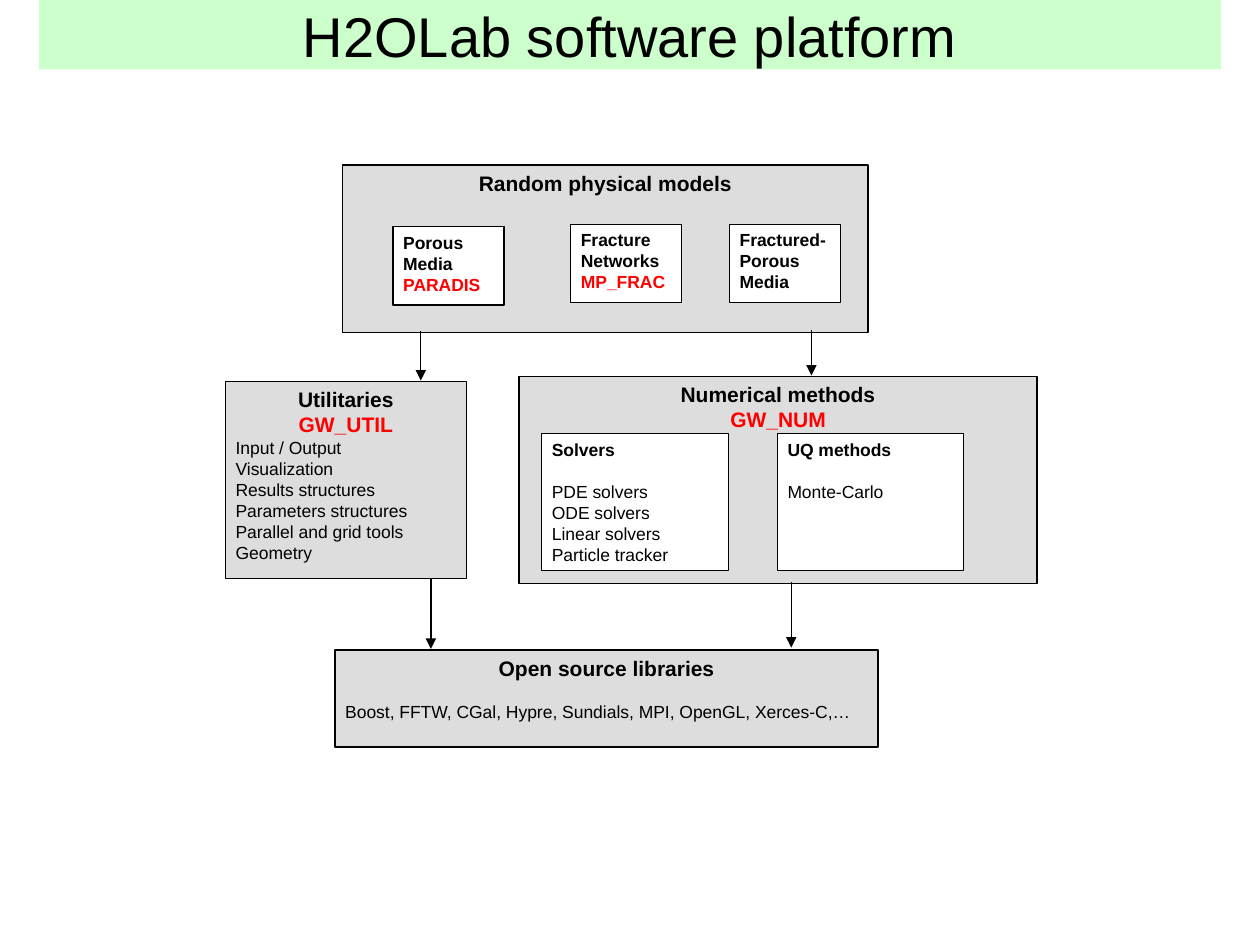
from lxml import etree
from pptx import Presentation
from pptx.dml.color import RGBColor
from pptx.enum.shapes import MSO_CONNECTOR, MSO_SHAPE
from pptx.enum.text import MSO_ANCHOR, PP_ALIGN
from pptx.oxml.ns import qn
from pptx.util import Inches, Pt

BLACK = RGBColor(0x00, 0x00, 0x00)
WHITE = RGBColor(0xFF, 0xFF, 0xFF)
RED = RGBColor(0xFF, 0x00, 0x00)
GREY = RGBColor(0xDD, 0xDD, 0xDD)
MINT = RGBColor(0xCC, 0xFF, 0xCC)
LINE_WIDTH = Pt(0.75)

# Each style holds paragraph values and font values.
HEADING = ({"alignment": PP_ALIGN.CENTER}, {"size": Pt(12), "bold": True})
LABEL = ({"alignment": PP_ALIGN.LEFT}, {"size": Pt(10), "bold": True})
ITEM = ({"alignment": PP_ALIGN.LEFT}, {"size": Pt(10), "bold": False})
SPACED_ITEM = ({**ITEM[0], "space_before": Pt(12)}, ITEM[1])
TITLE = ({"alignment": PP_ALIGN.CENTER}, {"size": Pt(32), "bold": False})


def set_values(target, values):
    for name, value in values.items():
        setattr(target, name, value)


def place(shape, left, top, width, height):
    set_values(shape, {"left": Inches(left), "top": Inches(top),
                       "width": Inches(width), "height": Inches(height)})


def write(frame, lines):
    """Fill a text frame with (text, style, colour) lines."""
    for index, (text, style, color) in enumerate(lines):
        para = frame.add_paragraph() if index else frame.paragraphs[0]
        para_values, font_values = style
        set_values(para, para_values)
        span = para.add_run()
        span.text = text
        set_values(span.font, {"name": "Arial", **font_values})
        span.font.color.rgb = color


def add_title(page, text, area):
    title = page.shapes.title
    place(title, *area)
    title.fill.solid()
    title.fill.fore_color.rgb = MINT
    set_values(title.text_frame, {"vertical_anchor": MSO_ANCHOR.MIDDLE,
                                  "word_wrap": True})
    write(title.text_frame, [(text, TITLE, BLACK)])


def add_box(page, area, fill, lines):
    box = page.shapes.add_shape(MSO_SHAPE.RECTANGLE, *map(Inches, area))
    box.shadow.inherit = False
    box.fill.solid()
    box.fill.fore_color.rgb = fill
    box.line.color.rgb = BLACK
    box.line.width = LINE_WIDTH
    set_values(box.text_frame, {
        "word_wrap": True, "vertical_anchor": MSO_ANCHOR.TOP,
        "margin_left": Inches(0.08), "margin_right": Inches(0.08),
        "margin_top": Inches(0.04), "margin_bottom": Inches(0.04)})
    write(box.text_frame, lines)


def add_down_arrow(page, x, top, bottom):
    arrow = page.shapes.add_connector(
        MSO_CONNECTOR.STRAIGHT, *map(Inches, (x, top, x, bottom)))
    arrow.line.color.rgb = BLACK
    arrow.line.width = LINE_WIDTH
    etree.SubElement(arrow.line._get_or_add_ln(), qn("a:tailEnd"), type="triangle")
    etree.SubElement(arrow._element.spPr, qn("a:effectLst"))


def add_physical_models(page, left, top, width, height):
    add_box(page, (left, top, width, height), GREY,
            [("Random physical models", HEADING, BLACK)])
    models = [
        (0.4, 0.49, ["Porous Media"], "PARADIS"),
        (1.81, 0.47, ["Fracture", "Networks"], "MP_FRAC"),
        (3.07, 0.47, ["Fractured-Porous Media"], None),
    ]
    for dx, dy, names, code in models:
        lines = [(name, LABEL, BLACK) for name in names]
        if code:
            lines.append((code, LABEL, RED))
        add_box(page, (left + dx, top + dy, 0.88, 0.62), WHITE, lines)


def add_utilities(page, *area):
    items = ["Input / Output", "Visualization", "Results structures",
             "Parameters structures", "Parallel and grid tools", "Geometry"]
    add_box(page, area, GREY,
            [("Utilitaries", HEADING, BLACK), ("GW_UTIL", HEADING, RED)]
            + [(item, ITEM, BLACK) for item in items])


def add_numerical_methods(page, left, top, width, height):
    add_box(page, (left, top, width, height), GREY,
            [("Numerical methods", HEADING, BLACK), ("GW_NUM", HEADING, RED)])
    groups = [
        (0.18, "Solvers", ["PDE solvers", "ODE solvers", "Linear solvers",
                           "Particle tracker"]),
        (2.05, "UQ methods", ["Monte-Carlo"]),
    ]
    for dx, name, (first, *others) in groups:
        add_box(page, (left + dx, top + 0.45, 1.48, 1.09), WHITE,
                [(name, LABEL, BLACK), (first, SPACED_ITEM, BLACK)]
                + [(item, ITEM, BLACK) for item in others])


def add_libraries(page, *area):
    names = "Boost, FFTW, CGal, Hypre, Sundials, MPI, OpenGL, Xerces-C,…"
    add_box(page, area, GREY, [("Open source libraries", HEADING, BLACK),
                               (names, SPACED_ITEM, BLACK)])


def main():
    deck = Presentation()
    deck.slide_width, deck.slide_height = Inches(10), Inches(7.5)
    page = deck.slides.add_slide(deck.slide_layouts[5])
    add_title(page, "H2OLab software platform", (0.31, 0, 9.38, 0.55))
    add_physical_models(page, 2.72, 1.31, 4.17, 1.33)
    add_utilities(page, 1.79, 3.03, 1.91, 1.56)
    add_numerical_methods(page, 4.12, 2.99, 4.11, 1.64)
    add_libraries(page, 2.66, 5.16, 4.31, 0.77)
    for x, top, bottom in [(3.34, 2.63, 3.02), (6.44, 2.62, 2.98),
                           (3.42, 4.59, 5.15), (6.28, 4.62, 5.14)]:
        add_down_arrow(page, x, top, bottom)
    deck.save("out.pptx")


if __name__ == "__main__":
    main()
